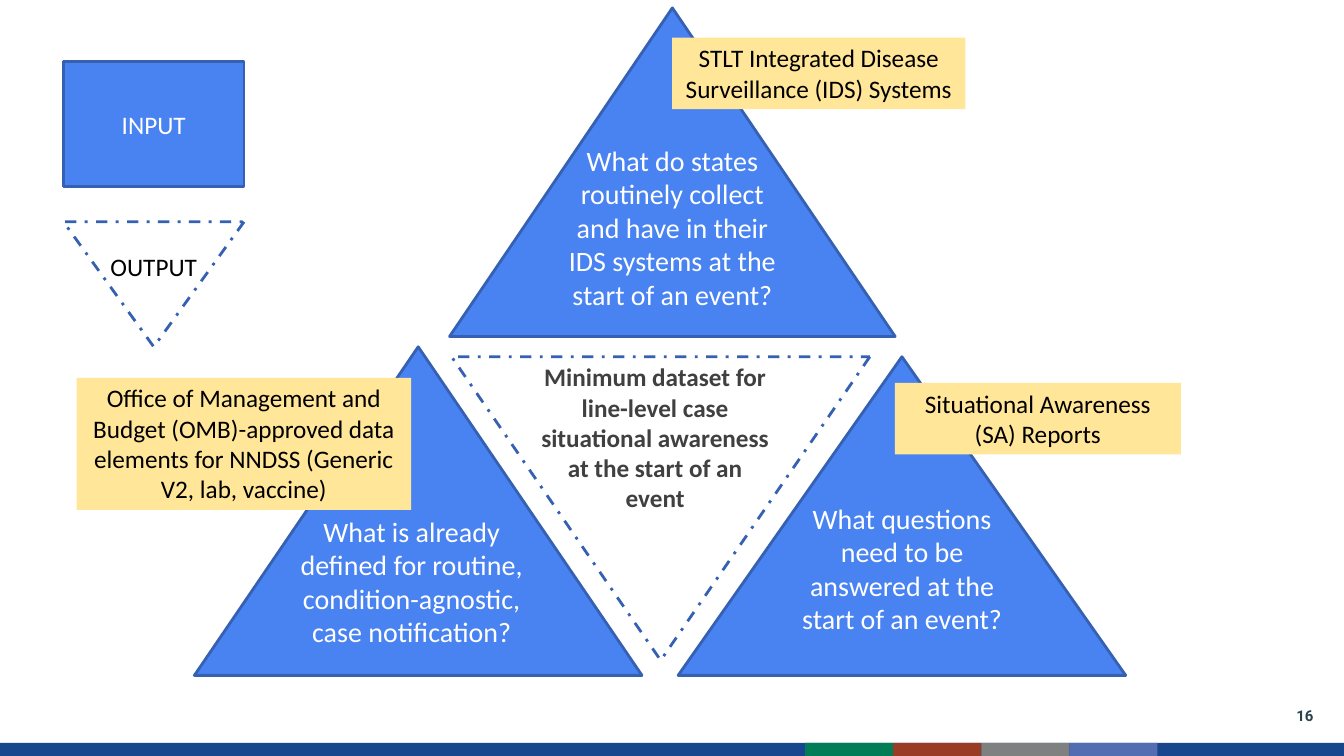
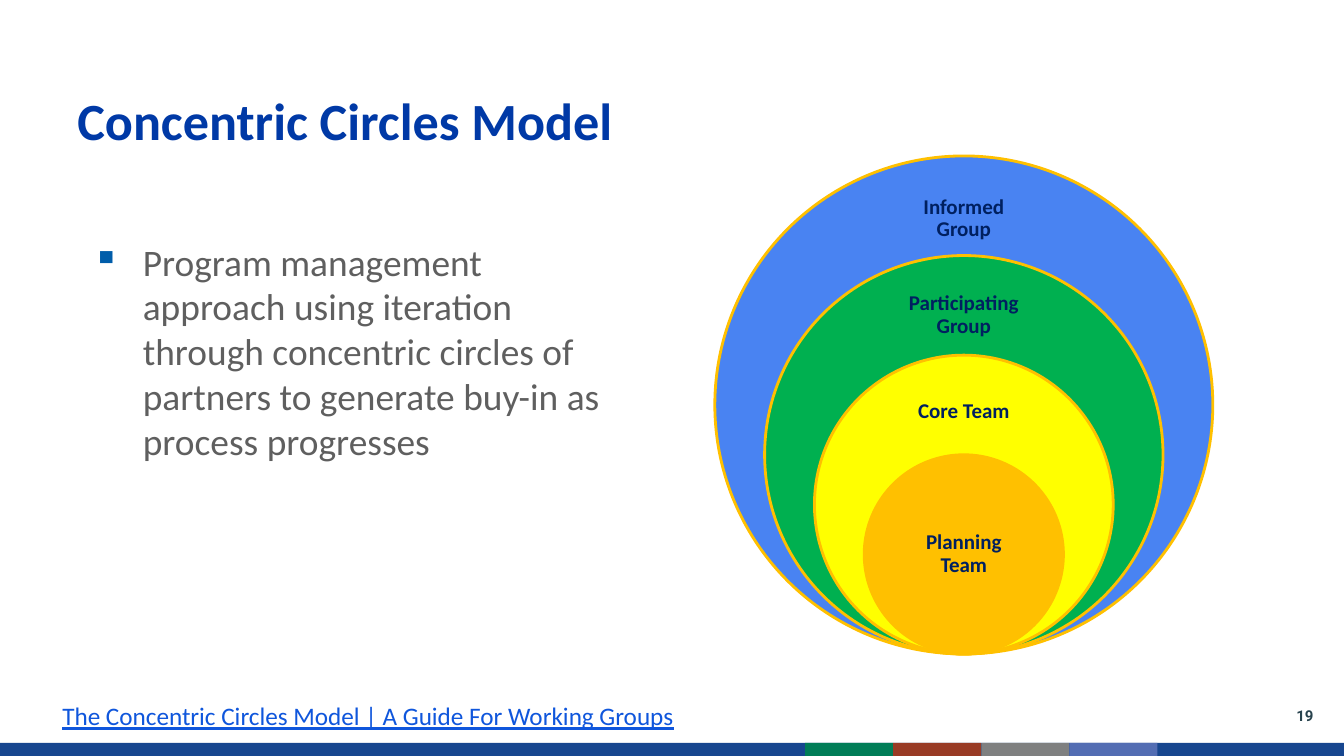
import pptx
import pptx.dml.color
import pptx.enum.dml
import pptx.enum.shapes
import pptx.enum.text
import pptx.util
import lxml.etree

Cm = pptx.util.Cm
Pt = pptx.util.Pt
hex_colour = pptx.dml.color.RGBColor.from_string
SHAPE = pptx.enum.shapes.MSO_SHAPE
ALIGN = pptx.enum.text.PP_ALIGN
ANCHOR = pptx.enum.text.MSO_ANCHOR
DASH_DOT = pptx.enum.dml.MSO_LINE.DASH_DOT

BLUE = "4983F2"
EDGE = "3661B3"
NAVY = "17468F"
GOLD = "FFC000"
SAND = "FFE699"
WHITE = "FFFFFF"
BLACK = "000000"


def draw(page, kind, place, fill=None, line=None, dash=None):
    shape = page.shapes.add_shape(kind, *[Cm(length) for length in place])
    shape.shadow.inherit = False
    if fill:
        shape.fill.solid()
        shape.fill.fore_color.rgb = hex_colour(fill)
    else:
        shape.fill.background()
    if line:
        shape.line.color.rgb = hex_colour(line)
        shape.line.width = Pt(2)
        shape.line.dash_style = dash
    else:
        shape.line.fill.background()
    return shape


def write(page, place, text, size=18, colour=BLACK, font="Calibri", bold=False,
          underline=False, align=ALIGN.CENTER, anchor=ANCHOR.TOP, spacing=None, inset=None):
    box = page.shapes.add_textbox(*[Cm(length) for length in place])
    frame = box.text_frame
    frame.word_wrap = True
    frame.vertical_anchor = anchor
    if inset is not None:
        frame.margin_left = frame.margin_right = Cm(inset)
        frame.margin_top = frame.margin_bottom = Cm(inset)
    para = frame.paragraphs[0]
    para.alignment = align
    para.line_spacing = spacing
    span = para.add_run()
    span.text = text
    span.font.name = font
    span.font.size = Pt(size)
    span.font.bold = bold
    span.font.underline = underline
    span.font.color.rgb = hex_colour(colour)
    return box


deck = pptx.Presentation()
deck.slide_width = Cm(33.87)
deck.slide_height = Cm(19.05)

pages = []
for number in ("16", "19"):
    page = deck.slides.add_slide(deck.slide_layouts[6])
    draw(page, SHAPE.RECTANGLE, (0, 18.72, 33.87, 0.33), NAVY)
    for index, colour in enumerate(("007D57", "993B25", "7F8080", "536DB3")):
        draw(page, SHAPE.RECTANGLE, (20.29 + 2.22 * index, 18.72, 2.22, 0.33), colour)
    write(page, (31.65, 17.53, 1.7, 1.02), number, size=10.7, colour="28434E",
          font="Roboto", bold=True, align=ALIGN.RIGHT, anchor=ANCHOR.MIDDLE)
    pages.append(page)

triangle_page, circle_page = pages

questions = [
    ((4.9, 8.74, 11.28, 8.28), (6.91, 12.83, 6.93, 4.52),
     "What is already defined for routine, condition-agnostic, case notification?"),
    ((17.09, 8.99, 11.28, 8.03), (19.79, 12.5, 5.89, 4.52),
     "What questions need to be answered at the start of an event?"),
    ((11.33, 0.2, 11.23, 8.28), (14, 3.48, 5.89, 5.38),
     "What do states routinely collect and have in their IDS systems at the start of an event?"),
]
for triangle_place, text_place, question in questions:
    draw(triangle_page, SHAPE.ISOSCELES_TRIANGLE, triangle_place, BLUE, EDGE)
    write(triangle_page, text_place, question, size=20, colour=WHITE)

for output_place in ((11.38, 8.99, 10.54, 7.65), (1.6, 5.59, 4.55, 3.15)):
    output = draw(triangle_page, SHAPE.ISOSCELES_TRIANGLE, output_place, line=EDGE, dash=DASH_DOT)
    output.rotation = 180
write(triangle_page, (13.26, 8.99, 6.5, 4.88),
      "Minimum dataset for line-level case situational awareness at the start of an event",
      colour="404040", bold=True)

input_place = (1.6, 1.55, 4.55, 3.15)
draw(triangle_page, SHAPE.RECTANGLE, input_place, BLUE, EDGE)
write(triangle_page, input_place, "INPUT", colour=WHITE, anchor=ANCHOR.MIDDLE)
write(triangle_page, (1.6, 6.22, 4.55, 1.02), "OUTPUT")

sources = [
    ((16.94, 0.95, 7.39, 1.8), "STLT Integrated Disease Surveillance (IDS) Systems"),
    ((1.93, 9.52, 8.43, 3.33),
     "Office of Management and Budget (OMB)-approved data elements for NNDSS (Generic V2, lab, vaccine)"),
    ((22.55, 9.65, 7.21, 1.8), "Situational Awareness (SA) Reports"),
]
for place, source in sources:
    draw(triangle_page, SHAPE.RECTANGLE, place, SAND)
    write(triangle_page, place, source)

write(circle_page, (1.7, 0.76, 30.48, 3.18), "Concentric Circles Model", size=37.3,
      colour="0039A6", bold=True, align=ALIGN.LEFT, anchor=ANCHOR.BOTTOM, spacing=Pt(40))

body = write(circle_page, (2.08, 5.89, 14, 7.29),
             "Program management approach using iteration through concentric circles of "
             "partners to generate buy-in as process progresses",
             size=26.7, colour="5F5F5F", align=ALIGN.LEFT)
main_ns = "{http://schemas.openxmlformats.org/drawingml/2006/main}"
bullet = body.text_frame.paragraphs[0]._p.get_or_add_pPr()
bullet.set("marL", str(Cm(1.27)))
bullet.set("indent", str(Cm(-1.27)))
bullet_colour = lxml.etree.SubElement(bullet, main_ns + "buClr")
lxml.etree.SubElement(bullet_colour, main_ns + "srgbClr", val="005DAA")
lxml.etree.SubElement(bullet, main_ns + "buChar", char="▪")

centre, bottom, step = 24.29, 16.48, 2.51
label_width, label_height = 3.5, 1.8
circles = [
    ("Informed Group", BLUE, 1.58),
    ("Participating Group", "00B050", 1.5),
    ("Core Team", "FFFF00", 1.43),
    ("Planning Team", GOLD, step),
]
for index, (label, colour, label_drop) in enumerate(circles):
    diameter = step * (5 - index)
    top = bottom - diameter
    draw(circle_page, SHAPE.OVAL, (centre - diameter / 2, top, diameter, diameter), colour, GOLD)
    write(circle_page,
          (centre - label_width / 2, top + label_drop - label_height / 2, label_width, label_height),
          label, size=15, colour="002060", bold=True, anchor=ANCHOR.MIDDLE, spacing=0.9, inset=0.3)

write(circle_page, (1.32, 17.53, 18, 1.02),
      "The Concentric Circles Model | A Guide For Working Groups",
      colour="0F56DC", underline=True, align=ALIGN.LEFT)

deck.save("out.pptx")
